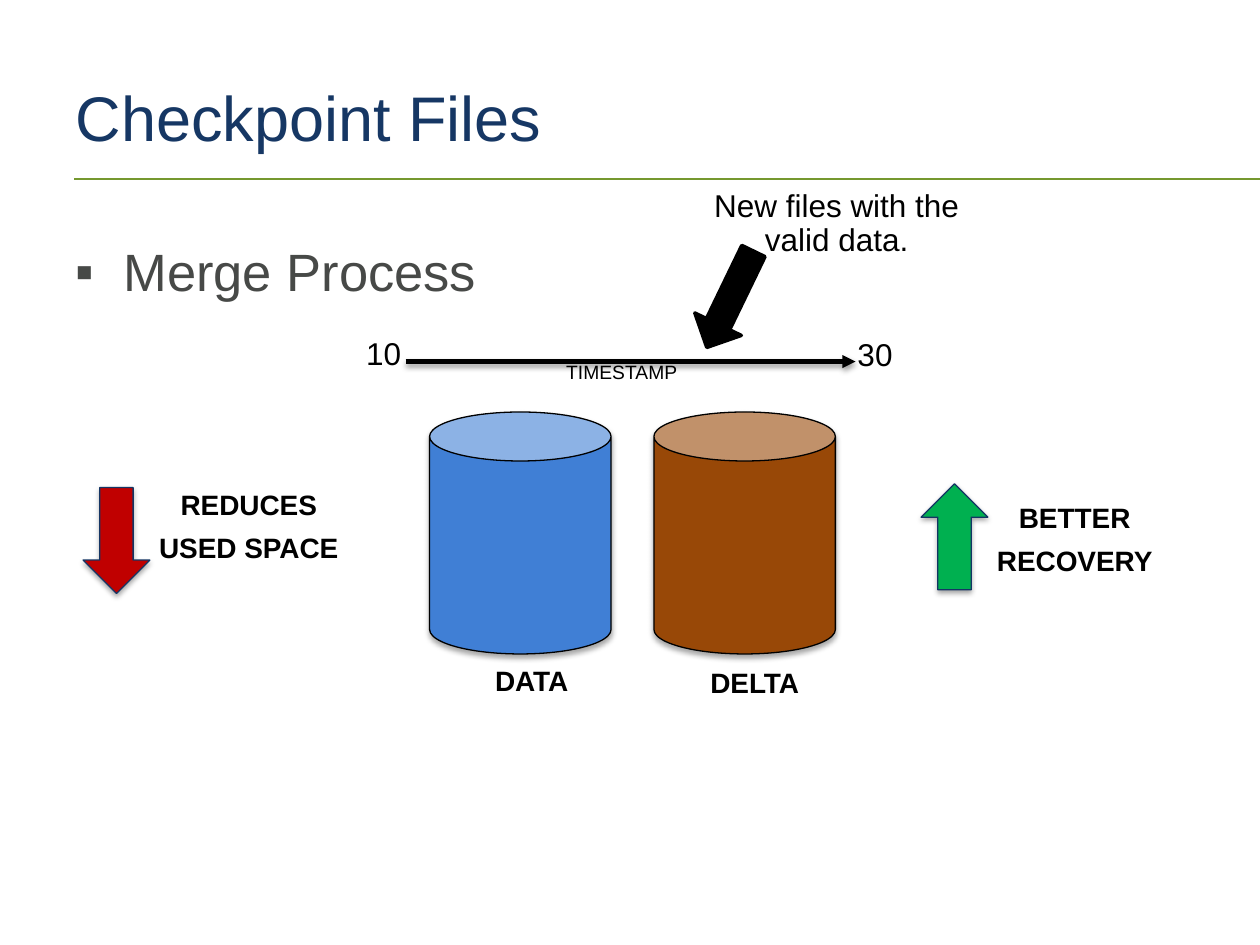
from lxml import etree
from pptx import Presentation
from pptx.dml.color import RGBColor
from pptx.enum.shapes import MSO_CONNECTOR, MSO_SHAPE
from pptx.enum.text import MSO_ANCHOR, MSO_AUTO_SIZE, PP_ALIGN
from pptx.oxml.ns import qn
from pptx.util import Inches, Pt

CAN, ARROW = MSO_SHAPE.CAN, MSO_SHAPE.DOWN_ARROW
STRAIGHT = MSO_CONNECTOR.STRAIGHT
LEFT, CENTER = PP_ALIGN.LEFT, PP_ALIGN.CENTER
TOP, MIDDLE = MSO_ANCHOR.TOP, MSO_ANCHOR.MIDDLE
GROW, FIXED = MSO_AUTO_SIZE.SHAPE_TO_FIT_TEXT, MSO_AUTO_SIZE.NONE
COLORS = {
    "title": "163764", "body": "474947", "rule": "75982F", "black": "000000",
    "data": "407FD5", "delta": "984807", "edge": "143564",
    "down": "C00000", "up": "00B050",
}
RGB = {name: RGBColor.from_string(value) for name, value in COLORS.items()}

prs = Presentation()
prs.slide_width, prs.slide_height = Inches(10), Inches(7.5)
COL, ROW = prs.slide_width / 100, prs.slide_height / 75
slide = prs.slides.add_slide(prs.slide_layouts[1])


def grid(x, y, w, h):
    return int(x * COL), int(y * ROW), int(w * COL), int(h * ROW)


def set_shadow(s, opacity):
    effects = etree.SubElement(s._element.spPr, qn("a:effectLst"))
    if opacity:
        shadow = etree.SubElement(
            effects, qn("a:outerShdw"), blurRad=str(Pt(3.1)), dist=str(Pt(1.8)),
            dir="5400000", rotWithShape="0")
        color = etree.SubElement(shadow, qn("a:srgbClr"), val=COLORS["black"])
        etree.SubElement(color, qn("a:alpha"), val=str(opacity * 1000))


title, body = slide.shapes.title, slide.placeholders[1]
for s, text, box, size, color, anchor in [
    (title, "Checkpoint Files", (5, 3, 90, 12.5), 36, "title", MIDDLE),
    (body, "Merge Process", (5, 17.5, 90, 49.5), 30, "body", TOP),
]:
    s.left, s.top, s.width, s.height = grid(*box)
    tf = s.text_frame
    tf.text = text
    tf.auto_size, tf.vertical_anchor = FIXED, anchor
    p = tf.paragraphs[0]
    p.alignment = LEFT
    if s is body:
        pPr = p._p.get_or_add_pPr()
        pPr.set("marL", str(Inches(0.38)))
        pPr.set("indent", str(Inches(-0.38)))
        etree.SubElement(pPr, qn("a:buChar"), char="▪")
        p.line_spacing = 1.2
        p.space_before = Pt(0)
    font = p.runs[0].font
    font.name, font.size, font.color.rgb = "Arial", Pt(size), RGB[color]

for x1, x2, y, color, width, is_arrow in [
    (5.9, 100, 14.2, "rule", 1, False),
    (32.2, 67.9, 28.7, "black", 2.5, True),
]:
    x, y, w, _ = grid(x1, y, x2 - x1, 0)
    s = slide.shapes.add_connector(STRAIGHT, x, y, x + w, y)
    s.line.color.rgb, s.line.width = RGB[color], Pt(width)
    if is_arrow:
        etree.SubElement(s.line._ln, qn("a:tailEnd"), type="triangle")
    set_shadow(s, 38 if is_arrow else 0)

for kind, box, turn, fill, edge, width, opacity in [
    (CAN, (34.1, 32.7, 14.4, 19.2), 0, "data", "black", 0.75, 35),
    (CAN, (51.9, 32.7, 14.4, 19.2), 0, "delta", "black", 0.75, 35),
    (ARROW, (6.6, 38.7, 5.3, 8.4), 0, "down", "edge", 0.75, 35),
    (ARROW, (73.1, 38.4, 5.3, 8.4), 180, "up", "edge", 0.75, 35),
    (ARROW, (55.9, 19.5, 4.1, 8.5), 25.8, "black", "black", 2, 0),
]:
    s = slide.shapes.add_shape(kind, *grid(*box))
    if kind == CAN:
        s.adjustments[0] = 0.27
    s.rotation = turn
    s.fill.solid()
    s.fill.fore_color.rgb = RGB[fill]
    s.line.color.rgb, s.line.width = RGB[edge], Pt(width)
    set_shadow(s, opacity)

for text, box, size, bold in [
    ("DATA", (36.8, 51.8, 10.8, 6.3), 16, True),
    ("DELTA", (53.9, 51.9, 12, 6.3), 16, True),
    ("TIMESTAMP", (41.1, 28, 16.5, 5.7), 11, False),
    ("10", (26.6, 25.5, 7.7, 6.6), 18, False),
    ("30", (65.6, 25.6, 7.7, 6.6), 18, False),
    ("REDUCES\nUSED SPACE", (10.1, 37.1, 19.3, 9.8), 16, True),
    ("BETTER\nRECOVERY", (76.6, 38.1, 17.4, 9.8), 16, True),
    ("New files with the valid data.", (54.2, 13.2, 24.4, 9.4), 18, False),
]:
    s = slide.shapes.add_textbox(*grid(*box))
    tf = s.text_frame
    tf.text = text
    tf.word_wrap, tf.auto_size = not bold, GROW
    tf.margin_left = tf.margin_right = Inches(0.24)
    tf.margin_top = tf.margin_bottom = Inches(0.19)
    for p in tf.paragraphs:
        p.alignment, p.line_spacing, p.space_after = CENTER, 0.9, Pt(7.3)
        font = p.runs[0].font
        font.name, font.size, font.bold = "Arial", Pt(size), bold
        font.color.rgb = RGB["black"]

prs.save("out.pptx")
